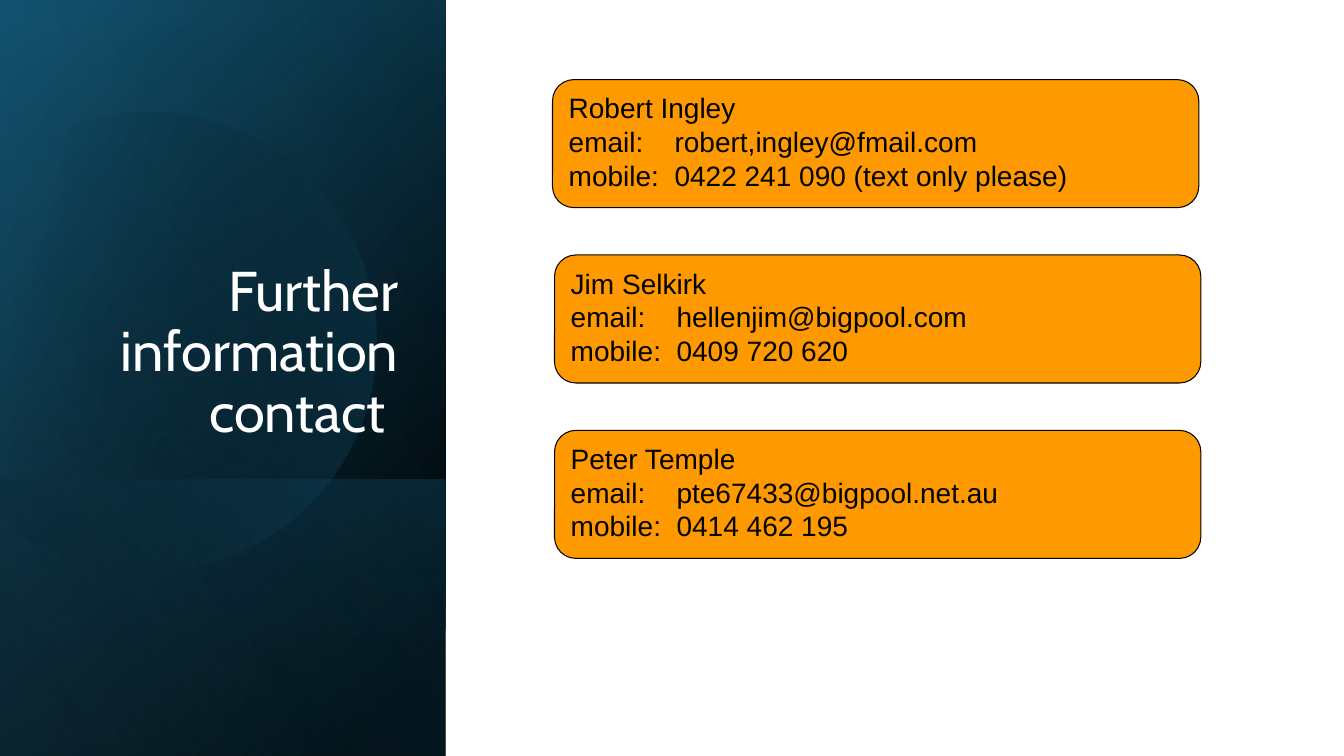
import math

from lxml import etree
from pptx import Presentation
from pptx import util as u
from pptx.dml.color import RGBColor
from pptx.enum import shapes, text
from pptx.oxml.ns import qn

CONTACTS = [
    (5.48, "Robert Ingley", "robert,ingley@fmail.com", "0422 241 090 (text only please)"),
    (5.5, "Jim Selkirk", "hellenjim@bigpool.com", "0409 720 620"),
    (5.5, "Peter Temple", "pte67433@bigpool.net.au", "0414 462 195"),
]


def colour(value):
    return RGBColor.from_string(value)


def write(paragraph, words, font="Arial", size=20, color="000000",
          align=text.PP_ALIGN.LEFT, spacing=None, tab=None):
    paragraph.alignment = align
    if spacing:
        paragraph.line_spacing = spacing
    if tab:
        tabs = etree.SubElement(paragraph._p.get_or_add_pPr(), qn("a:tabLst"))
        etree.SubElement(tabs, qn("a:tab"), pos=str(u.Inches(tab)), algn="l")
    run = paragraph.add_run()
    run.text = words
    run.font.name = font
    run.font.size = u.Pt(size)
    run.font.color.rgb = colour(color)


class ContactSlide:
    accent = "FF9900"
    outline = "000000"

    def __init__(self, deck):
        self.slide = deck.slides.add_slide(deck.slide_layouts[5])
        self.shapes = self.slide.shapes

    def gradient(self, shape, stops, angle):
        shape.shadow.inherit = False
        shape.line.fill.background()
        shape.fill.gradient()
        shape.fill.gradient_angle = 360 - angle
        for stop, (position, color, opacity) in zip(shape.fill.gradient_stops, stops):
            stop.position = position / 100
            stop.color.rgb = colour(color)
        fills = shape.element.spPr.iter(qn("a:srgbClr"))
        for fill, (position, color, opacity) in zip(list(fills), stops):
            etree.SubElement(fill, qn("a:alpha"), val=str(opacity * 1000))

    def panel(self, stops, angle, left=-1.54, top=1.54, width=7.5, height=4.42):
        panel = self.shapes.add_shape(
            shapes.MSO_SHAPE.RECTANGLE,
            u.Inches(left), u.Inches(top), u.Inches(width), u.Inches(height))
        panel.rotation = 90
        panel.element.spPr.get_or_add_xfrm().set("flipH", "1")
        self.gradient(panel, stops, angle)

    def cut_disc(self, x, y, radius, angles, rotation, stops, angle):
        def point(degrees, pull=0):
            a = math.radians(degrees)
            return (u.Inches(x + radius * (math.cos(a) - pull * math.sin(a))),
                    u.Inches(y + radius * (math.sin(a) + pull * math.cos(a))))

        builder = self.shapes.build_freeform(*point(angles[0]))
        for start, end in zip(angles, angles[1:]):
            pull = 4 / 3 * math.tan(math.radians(end - start) / 4)
            builder.add_line_segments(
                [point(start, pull), point(end, -pull), point(end)], close=False)
        builder.add_line_segments([], close=True)
        disc = builder.convert_to_shape()
        lines = list(disc.element.spPr.iter(qn("a:lnTo")))
        for first, second, last in zip(lines[::3], lines[1::3], lines[2::3]):
            first.tag = qn("a:cubicBezTo")
            for line in (second, last):
                first.append(line[0])
                line.getparent().remove(line)
        disc.rotation = rotation
        self.gradient(disc, stops, angle)

    def title(self, words, left, top, width, height):
        title = self.shapes.title
        title.left, title.top = u.Inches(left), u.Inches(top)
        title.width, title.height = u.Inches(width), u.Inches(height)
        title.text_frame.word_wrap = True
        title.text_frame.vertical_anchor = text.MSO_ANCHOR.BOTTOM
        write(title.text_frame.paragraphs[0], words, font="Cabin", size=40,
              color="FFFFFF", align=text.PP_ALIGN.RIGHT, spacing=0.9)
        self.shapes.element.append(title.element)

    def card(self, left, top, name, email, mobile):
        card = self.shapes.add_shape(
            shapes.MSO_SHAPE.FLOWCHART_ALTERNATE_PROCESS,
            u.Inches(left), u.Inches(top), u.Inches(6.41), u.Inches(1.27))
        card.shadow.inherit = False
        card.fill.solid()
        card.fill.fore_color.rgb = colour(self.accent)
        card.line.color.rgb = colour(self.outline)
        card.line.width = u.Pt(0.75)
        frame = card.text_frame
        frame.word_wrap = True
        frame.vertical_anchor = text.MSO_ANCHOR.TOP
        write(frame.paragraphs[0], name)
        for label, value in (("email:", email), ("mobile:", mobile)):
            write(frame.add_paragraph(), f"{label}\t{value}", tab=1.05)


def main():
    deck = Presentation()
    deck.slide_width, deck.slide_height = u.Inches(13.33), u.Inches(7.5)
    page = ContactSlide(deck)
    page.panel([(8, "000000", 100), (100, "104862", 100)], 50)
    page.panel([(0, "000000", 0), (99, "156082", 46)], 30, top=1.55)
    page.panel([(2, "156082", 29), (100, "000000", 30)], 130,
               left=0.84, top=3.92, width=2.74)
    page.cut_disc(1.45, 3.35, 2.28, (240, 270, 360, 450, 512), 343.9,
                  [(29, "000000", 0), (100, "156082", 43)], 30)
    page.panel([(0, "000000", 0), (99, "46B1E1", 11)], 120)
    page.title("Further information contact ", 0.64, 1.84, 3.41, 2.62)
    for row, (left, name, email, mobile) in enumerate(CONTACTS):
        page.card(left, 0.79 + 1.74 * row, name, email, mobile)
    deck.save("out.pptx")


if __name__ == "__main__":
    main()
